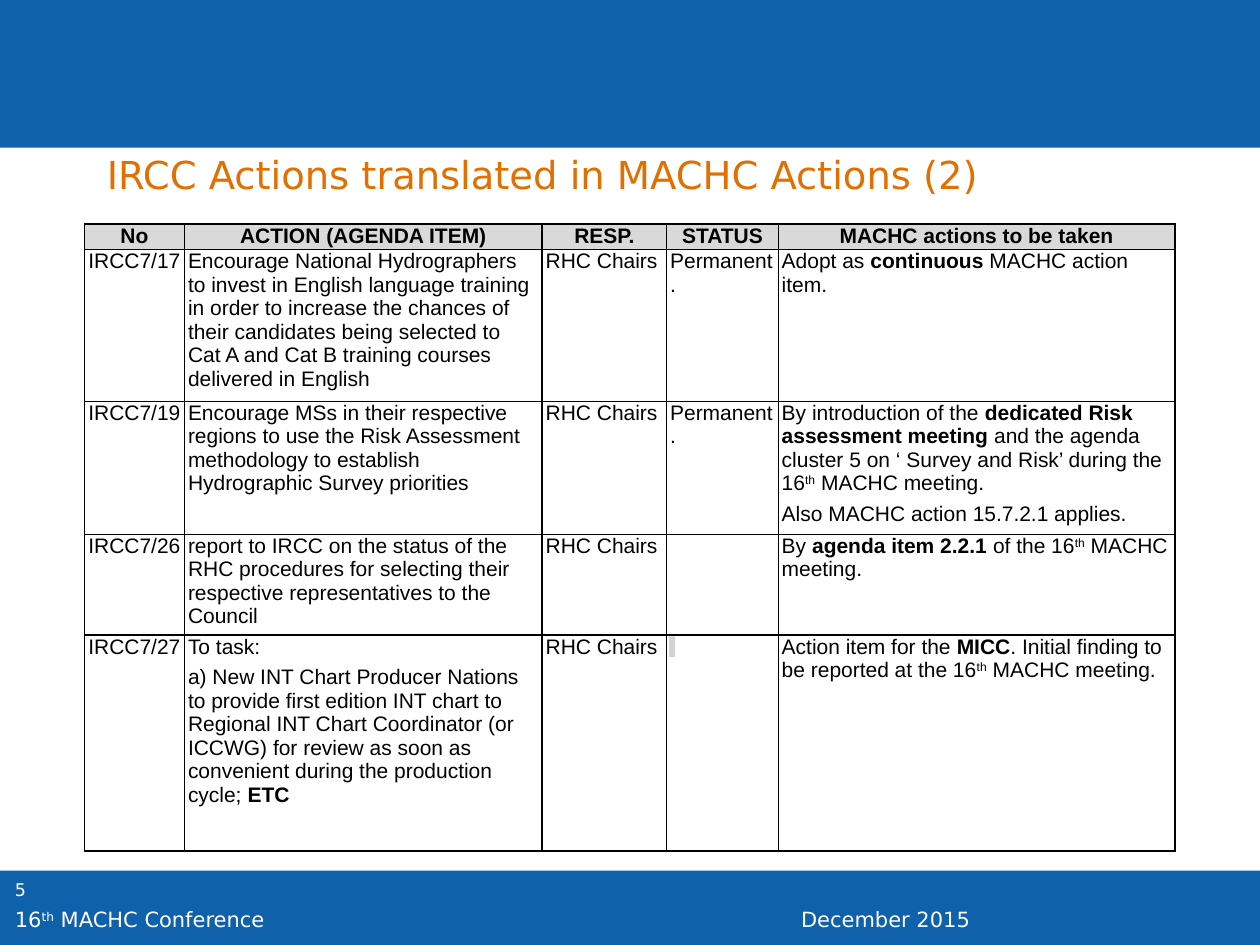
from pptx import Presentation
from pptx.dml.color import RGBColor
from pptx.enum.shapes import MSO_SHAPE
from pptx.enum.text import MSO_ANCHOR, MSO_AUTO_SIZE, PP_ALIGN
from pptx.oxml import parse_xml
from pptx.oxml.ns import nsdecls
from pptx.util import Cm, Pt

BLUE, ORANGE, WHITE, BLACK = "0E61AA", "E17000", "FFFFFF", "000000"
HEADER_GREY, MARK_GREY = "D9D9D9", "D3D3D3"
BOLD_MARK, SUPER_MARK = "*", "^"
COL_WIDTHS = [2.02, 7.21, 2.51, 2.25, 8.0]
ROW_HEIGHTS = [0.5, 3.06, 2.68, 2.03, 4.35]

ROWS = [
    [["No"], ["ACTION (AGENDA ITEM)"], ["RESP."], ["STATUS"],
     ["MACHC actions to be taken"]],
    [["IRCC7/17"],
     ["Encourage National Hydrographers to invest in English language training "
      "in order to increase the chances of their candidates being selected to "
      "Cat A and Cat B training courses delivered in English"],
     ["RHC Chairs"], ["Permanent."],
     ["Adopt as *continuous* MACHC action item."]],
    [["IRCC7/19"],
     ["Encourage MSs in their respective regions to use the Risk Assessment "
      "methodology to establish Hydrographic Survey priorities"],
     ["RHC Chairs"], ["Permanent."],
     ["By introduction of the *dedicated Risk assessment meeting* and the agenda "
      "cluster 5 on ‘ Survey and Risk’ during the 16^th^ MACHC meeting.",
      "Also MACHC action 15.7.2.1 applies."]],
    [["IRCC7/26"],
     ["report to IRCC on the status of the RHC procedures for selecting their "
      "respective representatives to the Council"],
     ["RHC Chairs"], [],
     ["By *agenda item 2.2.1 *of the 16^th^ MACHC meeting."]],
    [["IRCC7/27"],
     ["To task:",
      "a) New INT Chart Producer Nations to provide first edition INT chart to "
      "Regional INT Chart Coordinator (or ICCWG) for review as soon as "
      "convenient during the production cycle; *ETC*"],
     ["RHC Chairs"], [],
     ["Action item for the *MICC*. Initial finding to be reported at the "
      "16^th^ MACHC meeting."]],
]


def rgb(color):
    return RGBColor.from_string(color)


def write(p, text, size=12, font="DejaVu Sans", color=WHITE, bold=False,
          align=PP_ALIGN.LEFT):
    p.alignment = align
    for i, chunk in enumerate(text.split(BOLD_MARK)):
        for j, part in enumerate(chunk.split(SUPER_MARK)):
            if not part:
                continue
            r = p.add_run()
            r.text = part
            r.font.name = font
            r.font.size = Pt(size)
            r.font.bold = bold or i % 2 == 1
            r.font.color.rgb = rgb(color)
            if j % 2:
                r.font._element.set("baseline", "30000")


def place(sp, left, top, width, height):
    sp.left, sp.top, sp.width, sp.height = map(Cm, (left, top, width, height))


def add_rect(s, left, top, width, height, color):
    sp = s.shapes.add_shape(MSO_SHAPE.RECTANGLE, Cm(left), Cm(top),
                            Cm(width), Cm(height))
    sp.shadow.inherit = False
    sp.fill.solid()
    sp.fill.fore_color.rgb = rgb(color)
    sp.line.fill.background()


def add_label(s, left, top, width, height, text, **fmt):
    sp = s.shapes.add_textbox(Cm(left), Cm(top), Cm(width), Cm(height))
    sp.text_frame.word_wrap = True
    write(sp.text_frame.paragraphs[0], text, **fmt)


def set_title(s, text):
    sp = s.shapes.title
    place(sp, 1.9, 2.92, 18.57, 1.2)
    tf = sp.text_frame
    tf.word_wrap = True
    tf.auto_size = MSO_AUTO_SIZE.NONE
    tf.vertical_anchor = MSO_ANCHOR.MIDDLE
    write(tf.paragraphs[0], text, size=22, color=ORANGE)


def set_borders(cell):
    tcPr = cell._tc.get_or_add_tcPr()
    for i, side in enumerate(("lnL", "lnR", "lnT", "lnB")):
        tcPr.insert(i, parse_xml(
            f'<a:{side} {nsdecls("a")} w="12700"><a:solidFill>'
            f'<a:srgbClr val="{BLACK}"/></a:solidFill></a:{side}>'))


def fill_cell(cell, texts, header, centred):
    cell.margin_left = cell.margin_right = Cm(0.07)
    cell.margin_top = cell.margin_bottom = 0
    if header:
        cell.fill.solid()
        cell.fill.fore_color.rgb = rgb(HEADER_GREY)
    else:
        cell.fill.background()
    set_borders(cell)
    tf = cell.text_frame
    for i, text in enumerate(texts):
        p = tf.add_paragraph() if i else tf.paragraphs[0]
        p.space_before = Pt(2 if i else 0)
        p.space_after = Pt(2 if i < len(texts) - 1 else 0)
        write(p, text, font="Arial", color=BLACK, bold=header,
              align=PP_ALIGN.CENTER if centred else PP_ALIGN.LEFT)


def add_actions_table(s, left, top):
    table = s.shapes.add_table(
        len(ROWS), len(COL_WIDTHS), Cm(left), Cm(top),
        Cm(sum(COL_WIDTHS)), Cm(sum(ROW_HEIGHTS))).table
    table.horz_banding = False
    for col, width in zip(table.columns, COL_WIDTHS):
        col.width = Cm(width)
    for i, (row, height) in enumerate(zip(table.rows, ROW_HEIGHTS)):
        row.height = Cm(height)
        for j, texts in enumerate(ROWS[i]):
            fill_cell(table.cell(i, j), texts, i == 0, i == 0 or j == 0)


def main():
    prs = Presentation()
    prs.slide_width, prs.slide_height = Cm(25.4), Cm(19.05)
    s = prs.slides.add_slide(prs.slide_layouts[5])
    add_rect(s, 0, 17.55, 25.4, 1.5, BLUE)
    add_rect(s, 0, 0, 25.4, 2.98, BLUE)
    add_label(s, 0.05, 17.6, 1.98, 0.6, "5", size=10)
    add_label(s, 15.9, 18.15, 9.5, 0.6, "December 2015")
    add_label(s, 0.05, 18.15, 11.12, 0.6, "16^th^ MACHC Conference")
    set_title(s, "IRCC Actions translated in MACHC Actions (2)")
    add_actions_table(s, 1.7, 4.52)
    add_rect(s, 13.49, 12.83, 0.12, 0.42, MARK_GREY)
    prs.save("out.pptx")


if __name__ == "__main__":
    main()
